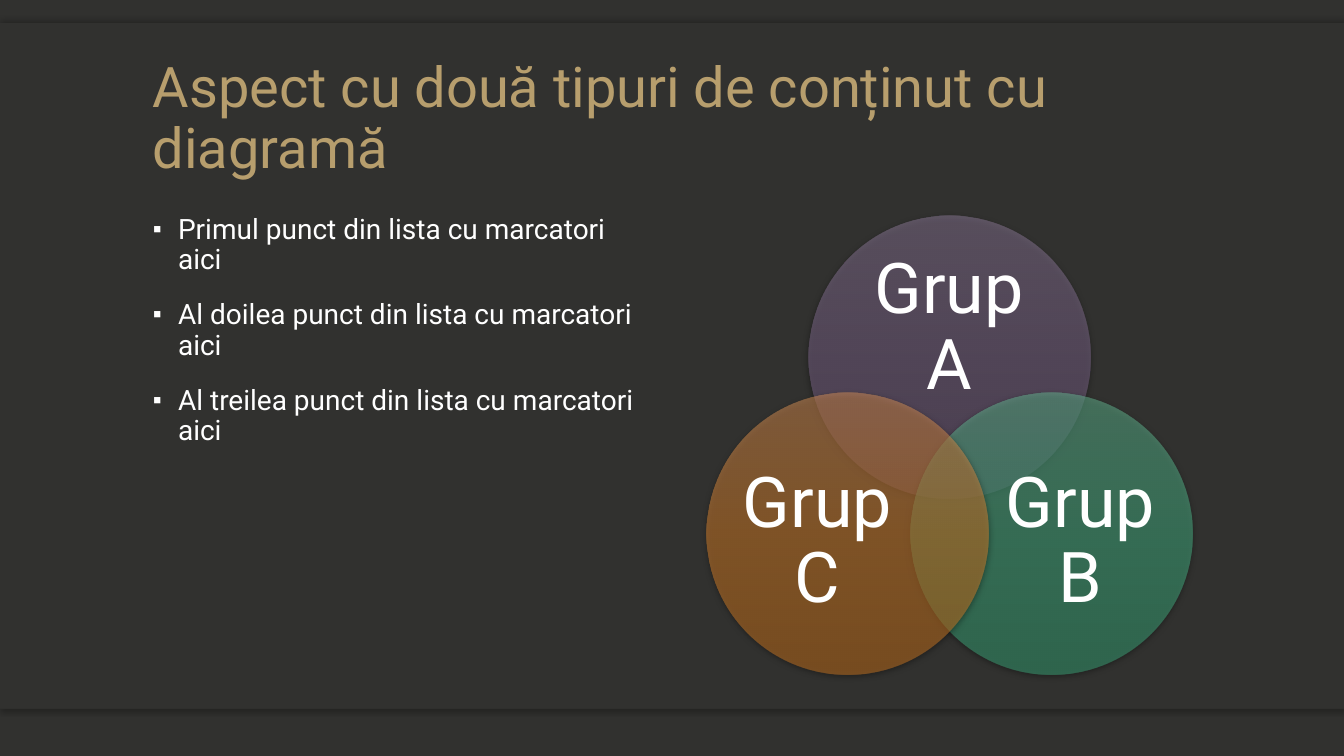
from dataclasses import dataclass
from math import cos, radians, sin
from lxml import etree
from pptx import Presentation
from pptx import util as u
from pptx.dml.color import RGBColor
from pptx.enum import shapes, text
from pptx.oxml.ns import qn

Pt = u.Pt


@dataclass(frozen=True)
class Theme:
    font: str = "Roboto"
    back: str = "31312F"
    gold: str = "B79E6D"
    white: str = "FFFFFF"
    shade: str = "000000"
    purple: tuple = ("907D9B", "826A90", "745D81")
    green: tuple = ("69BB96", "4BB88A", "3DA97B")
    orange: tuple = ("DB945A", "DD862F", "CD7721")
    title: int = 40
    body: int = 20
    group: int = 50


theme = Theme()


def add_run(p, words, size, color):
    r = p.add_run()
    r.text = words
    r.font.name = theme.font
    r.font.size = Pt(size)
    r.font.color.rgb = RGBColor.from_string(color)


def add_shadow(sp, alpha, blur, dist, angle):
    sp.shadow.inherit = False
    effects = sp._element.spPr.find(qn("a:effectLst"))
    shadow = etree.SubElement(effects, qn("a:outerShdw"), blurRad=str(Pt(blur)),
                              dist=str(Pt(dist)), dir=str(angle * 60000),
                              algn="ctr", rotWithShape="0")
    color = etree.SubElement(shadow, qn("a:srgbClr"), val=theme.shade)
    etree.SubElement(color, qn("a:alpha"), val=str(alpha * 1000))


prs = Presentation()
prs.slide_width, prs.slide_height = Pt(960), Pt(540)
s = prs.slides.add_slide(prs.slide_layouts[1])
s.background.fill.solid()
s.background.fill.fore_color.rgb = RGBColor.from_string(theme.back)

bands = [(470.9, 35.3, 90), (16.6, 35.3, 270), (16.6, 489.6, None)]
for i, (top, height, angle) in enumerate(bands):
    sp = s.shapes.add_shape(shapes.MSO_SHAPE.RECTANGLE, 0, Pt(top), prs.slide_width, Pt(height))
    sp.fill.solid()
    sp.fill.fore_color.rgb = RGBColor.from_string(theme.back)
    sp.line.fill.background()
    sp.shadow.inherit = False
    if angle is not None:
        add_shadow(sp, 25, 4, 2, angle)
    s.shapes._spTree.insert(2 + i, sp._element)

title, body = s.shapes.title, s.placeholders[1]
title.left, title.top, title.width, title.height = Pt(102), Pt(33), Pt(756), Pt(99.5)
tf = title.text_frame
tf.auto_size = text.MSO_AUTO_SIZE.NONE
tf.vertical_anchor = text.MSO_ANCHOR.BOTTOM
p = tf.paragraphs[0]
p.alignment = text.PP_ALIGN.LEFT
p.line_spacing = 0.9
add_run(p, "Aspect cu două tipuri de conținut cu diagramă", theme.title, theme.gold)

body.left, body.top, body.width, body.height = Pt(102), Pt(150), Pt(360), Pt(336)
tf = body.text_frame
tf.auto_size = text.MSO_AUTO_SIZE.NONE
for i, ordinal in enumerate(["Primul", "Al doilea", "Al treilea"]):
    p = tf.add_paragraph() if i else tf.paragraphs[0]
    pPr = p._p.get_or_add_pPr()
    pPr.set("marL", str(Pt(18)))
    pPr.set("indent", str(-Pt(18)))
    etree.SubElement(pPr, qn("a:buSzPct"), val="90000")
    etree.SubElement(pPr, qn("a:buChar"), char="▪")
    p.line_spacing = 0.9
    p.space_before = Pt(18 if i else 0)
    add_run(p, f"{ordinal} punct din lista cu marcatori aici", theme.body, theme.white)

center_x, center_y, reach, size = 678.2, 339, 84, 201.6
venn = s.shapes.add_group_shape()
groups = [
    ("Grup A", -90, theme.purple, (604.1, 189.4, 147.6, 90.7)),
    ("Grup B", 30, theme.green, (711.4, 331.9, 121, 110.9)),
    ("Grup C", 150, theme.orange, (523.4, 331.9, 121, 110.9)),
]
for label, angle, colors, box in groups:
    left = center_x + reach * cos(radians(angle)) - size / 2
    top = center_y + reach * sin(radians(angle)) - size / 2
    sp = venn.shapes.add_shape(shapes.MSO_SHAPE.OVAL, Pt(left), Pt(top), Pt(size), Pt(size))
    sp.line.fill.background()
    grad = etree.Element(qn("a:gradFill"), rotWithShape="1")
    stops = etree.SubElement(grad, qn("a:gsLst"))
    for i, color in enumerate(colors):
        stop = etree.SubElement(stops, qn("a:gs"), pos=str(i * 50000))
        rgb = etree.SubElement(stop, qn("a:srgbClr"), val=color)
        etree.SubElement(rgb, qn("a:alpha"), val="50000")
    etree.SubElement(grad, qn("a:lin"), ang="5400000", scaled="0")
    sp._element.spPr.find(qn("a:ln")).addprevious(grad)
    add_shadow(sp, 63, 4.5, 1.5, 90)

    tf = venn.shapes.add_textbox(*map(Pt, box)).text_frame
    tf.word_wrap = True
    tf.vertical_anchor = text.MSO_ANCHOR.MIDDLE
    tf.margin_left = tf.margin_right = tf.margin_top = tf.margin_bottom = 0
    p = tf.paragraphs[0]
    p.alignment = text.PP_ALIGN.CENTER
    p.line_spacing = 0.9
    add_run(p, label, theme.group, theme.white)

prs.save("out.pptx")
